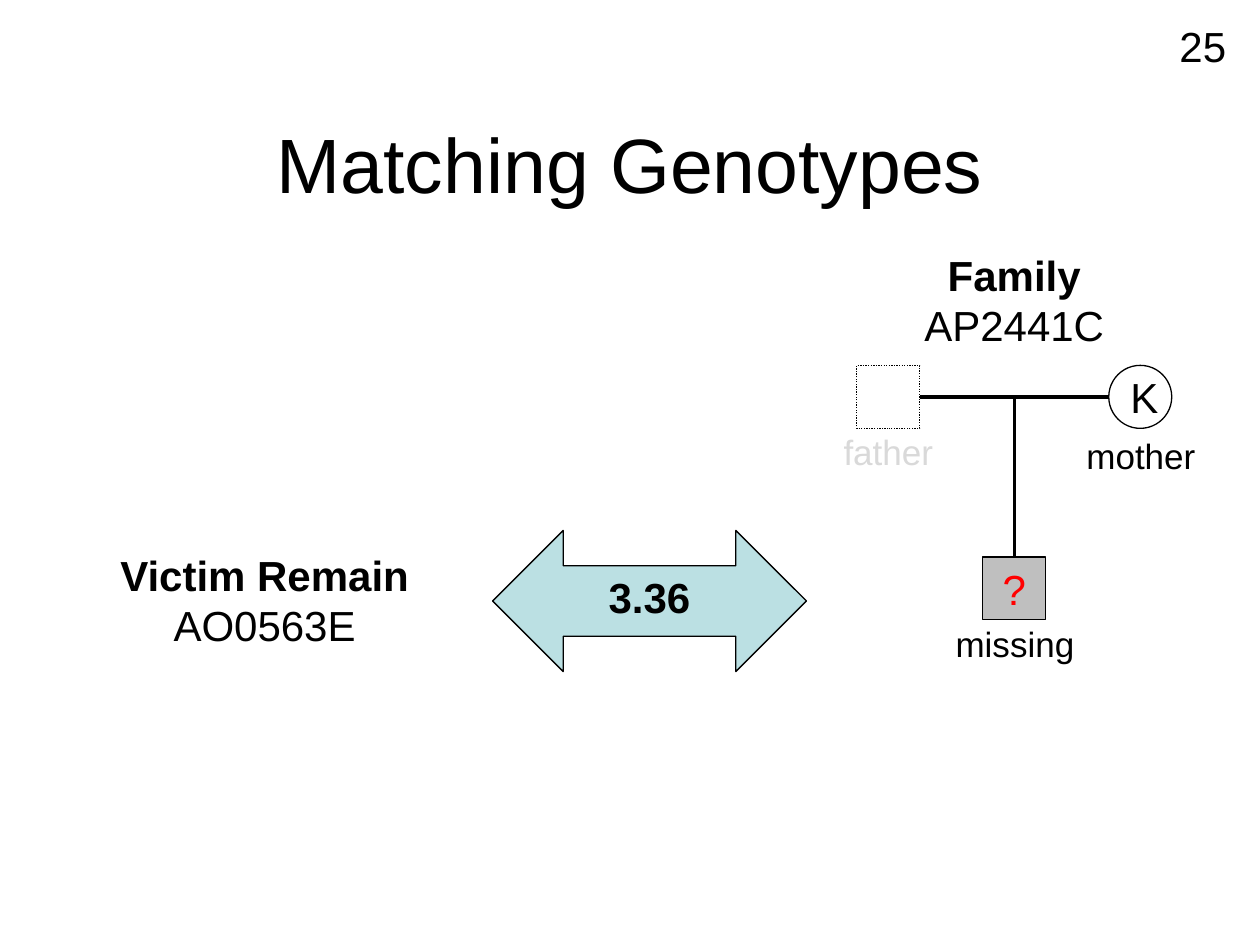
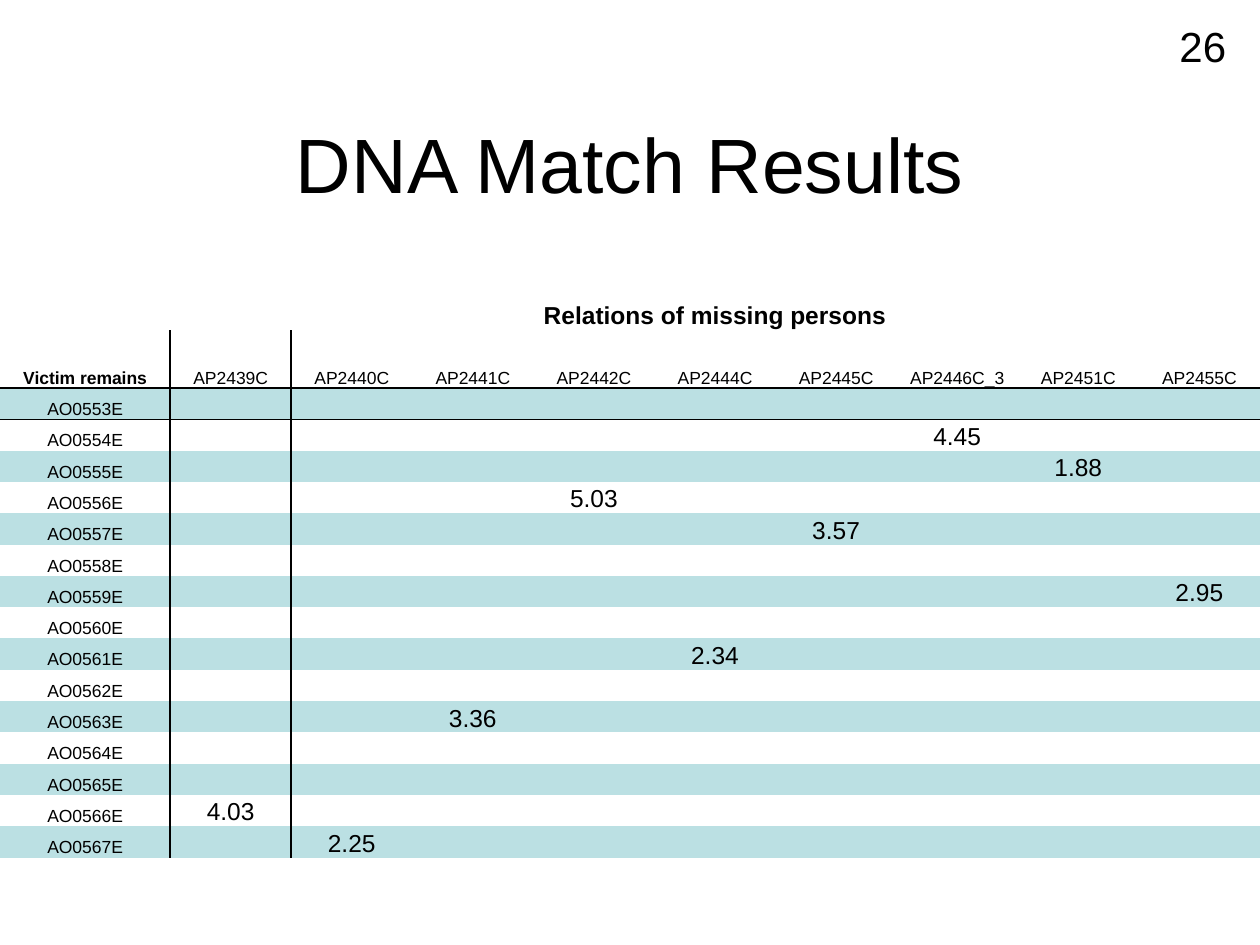
"""Build two slides on matching victim remains to families by DNA."""
from dataclasses import dataclass

from lxml import etree
from pptx import Presentation
from pptx.dml.color import RGBColor
from pptx.enum.dml import MSO_LINE
from pptx.enum.shapes import MSO_CONNECTOR, MSO_SHAPE
from pptx.enum.text import MSO_ANCHOR, MSO_AUTO_SIZE, PP_ALIGN
from pptx.oxml.ns import qn
from pptx.util import Inches, Pt

CENTER, RIGHT = PP_ALIGN.CENTER, PP_ALIGN.RIGHT
TOP, MIDDLE, BOTTOM = MSO_ANCHOR.TOP, MSO_ANCHOR.MIDDLE, MSO_ANCHOR.BOTTOM
FIT, FIXED = MSO_AUTO_SIZE.SHAPE_TO_FIT_TEXT, MSO_AUTO_SIZE.NONE
SQUARE, CIRCLE, ARROW = MSO_SHAPE.RECTANGLE, MSO_SHAPE.OVAL, MSO_SHAPE.LEFT_RIGHT_ARROW
STRAIGHT, DOTS = MSO_CONNECTOR.STRAIGHT, MSO_LINE.ROUND_DOT
PLAIN_GRID = "{2D5ABB26-0587-4C30-8999-92F81FD0307C}"
TITLE_ONLY = 5


@dataclass
class Theme:
    font: str = "Arial"
    ink: str = "000000"
    teal: str = "BBE0E3"
    gray: str = "BFBFBF"
    pale: str = "D9D9D9"
    red: str = "FF0000"
    title: int = 44
    large: int = 24
    label: int = 20
    score: int = 14
    code: int = 10
    thin: float = 0.75
    rule: int = 1
    thick: int = 2


class Deck:
    def __init__(self, theme):
        self.theme = theme
        self.file = Presentation()
        self.file.slide_width, self.file.slide_height = Inches(10), Inches(7.5)
        self.slide = self.shapes = None

    def start(self, title, page):
        layout = self.file.slide_layouts[TITLE_ONLY]
        self.slide = self.file.slides.add_slide(layout)
        self.shapes = self.slide.shapes
        head = self.shapes.title
        head.left, head.top, head.width, head.height = map(Inches, (0.75, 0.67, 8.5, 1.25))
        head.text_frame.auto_size = FIXED
        head.text_frame.vertical_anchor = MIDDLE
        self.words(head.text_frame, title, self.theme.title)
        self.text(page, 8.99, 0.11, 0.84, 0.46, align=RIGHT, wrap=True)

    def group(self):
        self.shapes = self.slide.shapes.add_group_shape().shapes

    def leave(self):
        self.shapes = self.slide.shapes

    def words(self, frame, text, size=None, color=None, bold=False, align=CENTER):
        frame.text = text
        for index, para in enumerate(frame.paragraphs):
            para.alignment = align
            for run in para.runs:
                font = run.font
                font.name = self.theme.font
                font.size = Pt(size or self.theme.large)
                font.bold = bold and index == 0
                font.color.rgb = RGBColor.from_string(color or self.theme.ink)

    def text(self, text, x, y, w, h, wrap=False, **style):
        box = self.shapes.add_textbox(*map(Inches, (x, y, w, h)))
        box.text_frame.word_wrap = wrap
        box.text_frame.auto_size = FIXED if wrap else FIT
        self.words(box.text_frame, text, **style)

    def shape(self, kind, x, y, w, h, text="", fill=None, dash=None, anchor=MIDDLE, **style):
        item = self.shapes.add_shape(kind, *map(Inches, (x, y, w, h)))
        item.shadow.inherit = False
        self.fill(item.fill, fill)
        item.line.color.rgb = RGBColor.from_string(self.theme.ink)
        item.line.width = Pt(self.theme.thin)
        if dash:
            item.line.dash_style = dash
        item.text_frame.vertical_anchor = anchor
        self.words(item.text_frame, text, **style)

    def fill(self, target, color):
        if color:
            target.solid()
            target.fore_color.rgb = RGBColor.from_string(color)
        else:
            target.background()

    def line(self, x, y, end_x, end_y):
        item = self.shapes.add_connector(STRAIGHT, *map(Inches, (x, y, end_x, end_y)))
        item.line.color.rgb = RGBColor.from_string(self.theme.ink)
        item.line.width = Pt(self.theme.thick)
        etree.SubElement(item._element.spPr, qn("a:effectLst"))

    def table(self, x, y, widths, heights):
        size = sum(widths), sum(heights)
        frame = self.shapes.add_table(len(heights), len(widths), *map(Inches, (x, y, *size)))
        grid = frame.table
        grid.first_row = grid.horz_banding = False
        grid._tbl.tblPr.find(qn("a:tableStyleId")).text = PLAIN_GRID
        for part, width in zip(grid.columns, widths):
            part.width = Inches(width)
        for part, height in zip(grid.rows, heights):
            part.height = Inches(height)
        return grid

    def cell(self, cell, text, size, fill=None, sides="", bold=False):
        cell.margin_left = cell.margin_right = cell.margin_top = Inches(0.01)
        cell.margin_bottom = 0
        cell.vertical_anchor = BOTTOM
        self.words(cell.text_frame, text, size, bold=bold)
        if not text:
            para = cell.text_frame.paragraphs[0]._p
            etree.SubElement(para, qn("a:endParaRPr"), sz=str(size * 100))
        self.fill(cell.fill, fill)
        for index, side in enumerate(sides):
            self.border(cell, side, index)

    def border(self, cell, side, index):
        edge = etree.Element(qn(f"a:ln{side}"), w=str(Pt(self.theme.rule)))
        paint = etree.SubElement(edge, qn("a:solidFill"))
        etree.SubElement(paint, qn("a:srgbClr"), val=self.theme.ink)
        cell._tc.get_or_add_tcPr().insert(index, edge)


def draw_match(deck):
    look = deck.theme
    deck.start("Matching Genotypes", "25")
    deck.group()
    side, top, child = 0.5, 2.9, 4.42
    father, mother = 6.8, 8.8
    middle = (father + mother + side) / 2
    level = top + side / 2
    deck.shape(SQUARE, father, top, side, side, dash=DOTS)
    deck.shape(CIRCLE, mother, top, side, side, "K")
    deck.line(mother, level, father + side, level)
    deck.line(middle, child, middle, level)
    deck.shape(SQUARE, middle - side / 2, child, side, side, "?", look.gray, color=look.red)
    for name, x, y, w, color in (
        ("missing", 7.48, 4.89, 1.15, look.ink),
        ("father", 6.59, 3.37, 0.92, look.pale),
        ("mother", 8.52, 3.4, 1.07, look.ink),
    ):
        deck.text(name, x, y, w, 0.44, size=look.label, color=color)
    deck.leave()
    deck.text("Victim Remain\nAO0563E", 0.84, 4.31, 2.52, 0.91, bold=True)
    deck.shape(ARROW, 3.91, 4.21, 2.49, 1.12, "3.36", look.teal, anchor=TOP, bold=True)
    deck.text("Family\nAP2441C", 7.23, 1.93, 1.64, 0.91, bold=True)


def draw_results(deck):
    look = deck.theme
    deck.start("DNA Match Results", "26")
    kin = ["AP2439C", "AP2440C", "AP2441C", "AP2442C", "AP2444C",
           "AP2445C", "AP2446C_3", "AP2451C", "AP2455C"]
    remains = [f"AO{number:04}E" for number in range(553, 568)]
    scores = {
        ("AO0554E", "AP2446C_3"): "4.45",
        ("AO0555E", "AP2451C"): "1.88",
        ("AO0556E", "AP2442C"): "5.03",
        ("AO0557E", "AP2445C"): "3.57",
        ("AO0559E", "AP2455C"): "2.95",
        ("AO0561E", "AP2444C"): "2.34",
        ("AO0563E", "AP2441C"): "3.36",
        ("AO0566E", "AP2439C"): "4.03",
        ("AO0567E", "AP2440C"): "2.25",
    }
    first, head = 1.35, 0.46
    widths = [first] + [(10 - first) / len(kin)] * len(kin)
    heights = [head] * 2 + [(4.65 - 2 * head) / len(remains)] * len(remains)
    grid = deck.table(0, 2.16, widths, heights)
    grid.cell(0, 1).merge(grid.cell(0, len(kin)))
    deck.cell(grid.cell(0, 0), "", look.code)
    deck.cell(grid.cell(0, 1), "Relations of missing persons", look.score, bold=True)
    deck.cell(grid.cell(1, 0), "Victim remains", look.code, sides="RB", bold=True)
    for col, name in enumerate(kin, 1):
        deck.cell(grid.cell(1, col), name, look.code, sides="LB" if col == 1 else "B")
    for row, code in enumerate(remains, 2):
        band = look.teal if row % 2 == 0 else None
        edge = "T" if row == 2 else ""
        deck.cell(grid.cell(row, 0), code, look.code, band, "R" + edge)
        for col, name in enumerate(kin, 1):
            sides = ("L" if col == 1 else "") + edge
            score = scores.get((code, name), "")
            deck.cell(grid.cell(row, col), score, look.score, band, sides)


def main():
    deck = Deck(Theme())
    draw_match(deck)
    draw_results(deck)
    deck.file.save("out.pptx")


if __name__ == "__main__":
    main()
